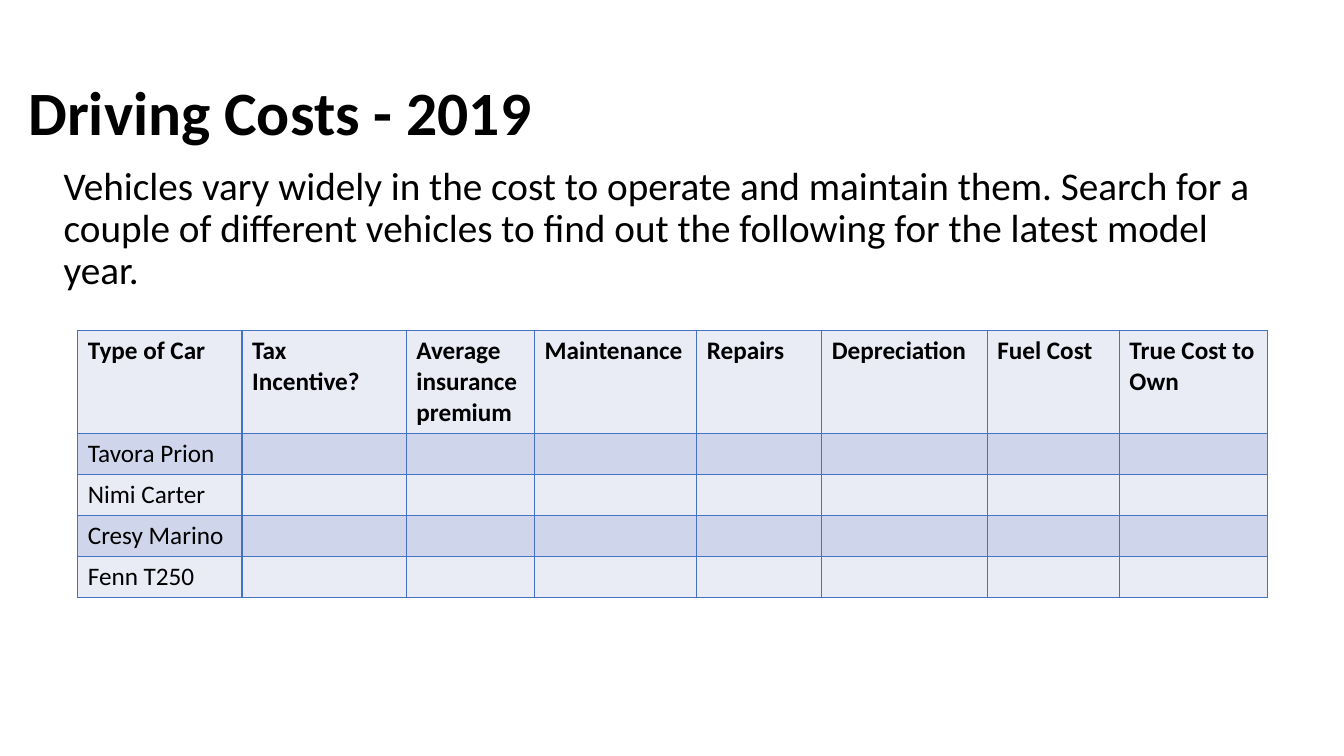
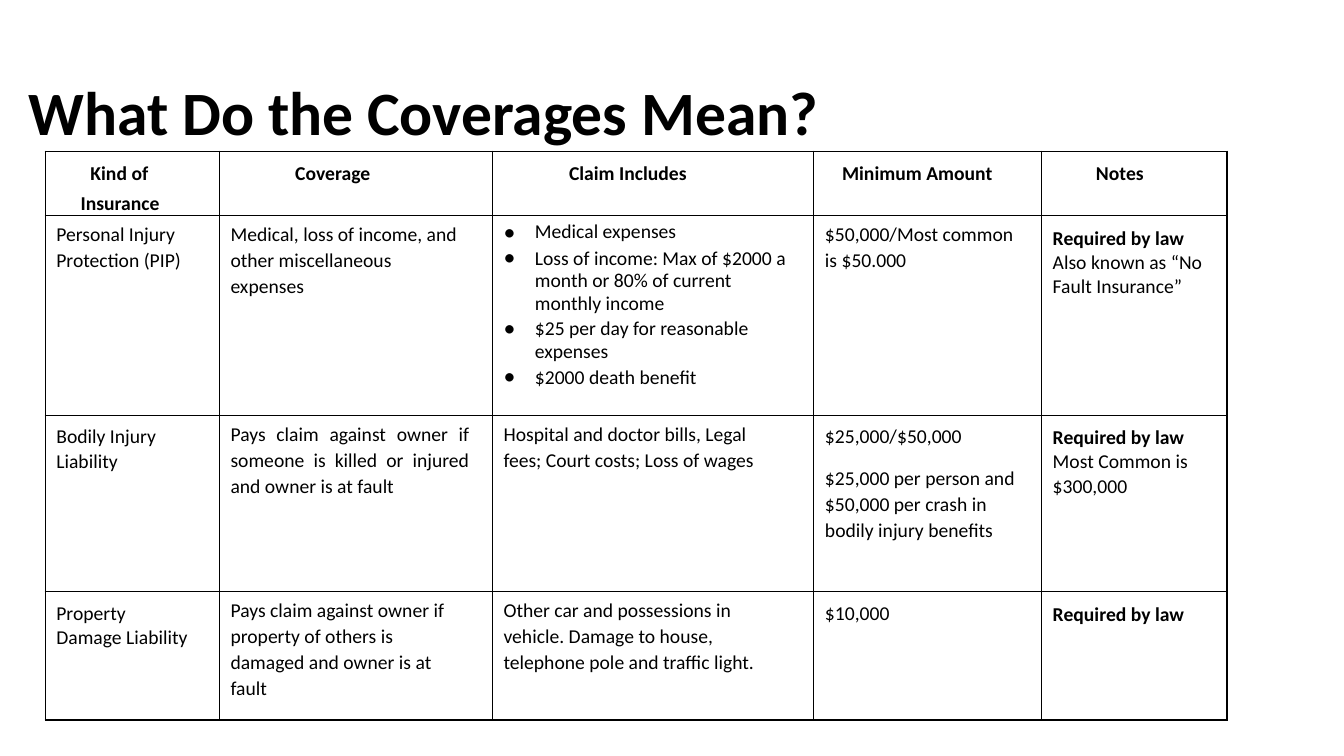
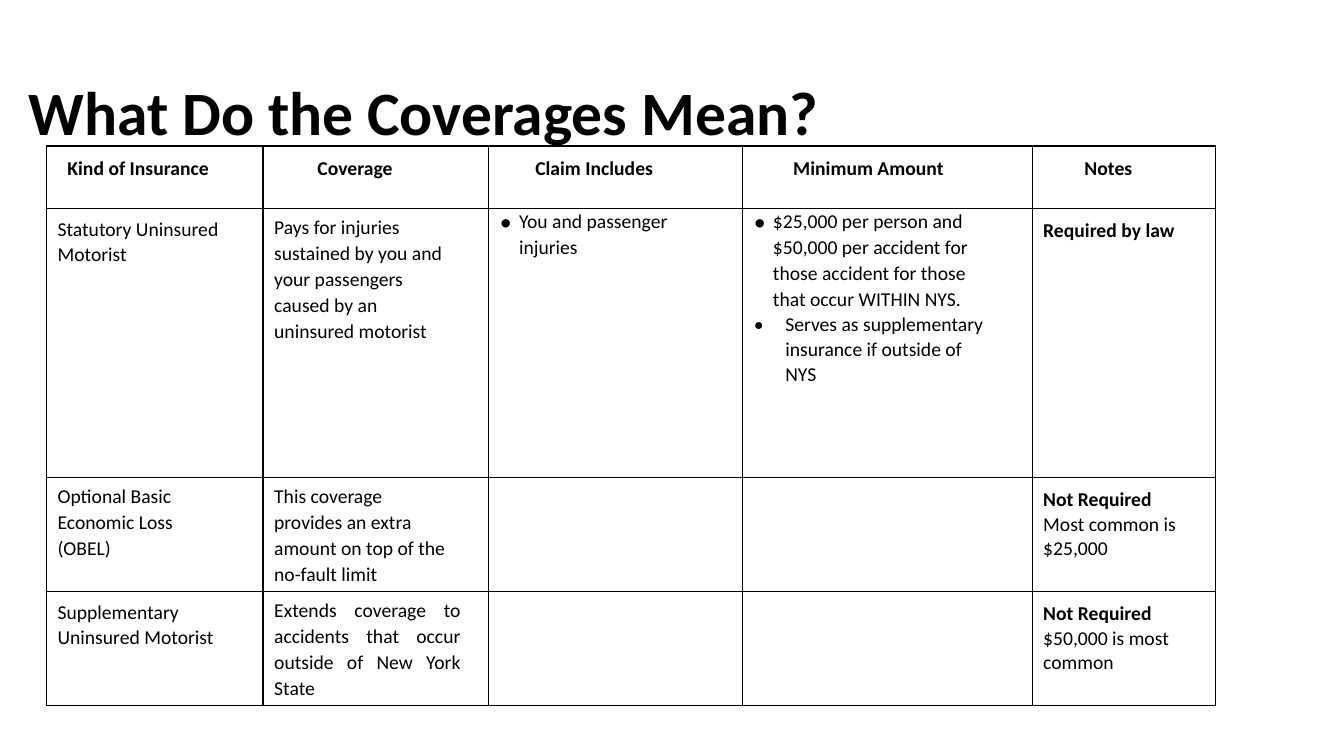
from lxml.etree import SubElement
from pptx import Presentation
from pptx.dml.color import RGBColor
from pptx.enum.text import MSO_ANCHOR, MSO_AUTO_SIZE, PP_ALIGN
from pptx.oxml.ns import qn
from pptx.util import Cm, Pt

FONT = "Calibri"
BLACK, BLUE, LIGHT, DARK = "000000", "4472C4", "E9EBF5", "CFD5EA"
CONTENT_LAYOUT, TITLE_LAYOUT = 1, 5
TITLE_BOX = (0.46, 1.07, 29.21, 3.68)
BODY_BOX = (1.35, 4.06, 30.68, 13.92)
CELL_LEFT, CELL_TOP = 0.28, 0.13

COSTS_TITLE = "Driving Costs - 2019"
COSTS_INTRO = ("Vehicles vary widely in the cost to operate and maintain them.\u00a0Search for a couple "
               "of different vehicles to find out the following for the latest model year.")
COSTS_HEADINGS = ["Type of Car", "Tax Incentive?", "Average insurance premium", "Maintenance",
                  "Repairs", "Depreciation", "Fuel Cost", "True Cost to Own"]
CARS = ["Tavora Prion", "Nimi Carter", "Cresy Marino", "Fenn T250"]
COSTS_GRID = {"at": (1.96, 8.33), "rows": [2.6] + [1.03] * len(CARS),
              "columns": [4.14, 4.14, 3.23, 4.09, 3.15, 4.17, 3.33, 3.73]}

STYLES = {
    "heading": {"spacing": 1.24, "bold": True},
    "text": {"spacing": 1.09},
    "later": {"spacing": 1.09, "before": 11.3},
    "justified": {"spacing": 1.09, "align": PP_ALIGN.JUSTIFY},
    "first": {"spacing": 1.19},
    "next": {"spacing": 1.04},
    "rule": {"spacing": 1.24, "bold": True},
    "note": {"spacing": 1.02},
    "top bullet": {"spacing": 1.2, "hanging": 0.79, "bullet": 121},
    "bullet": {"spacing": 0.95, "before": 2, "hanging": 0.79, "bullet": 121},
    "near bullet": {"spacing": 1.08, "hanging": 0.48, "bullet": 121},
    "small bullet": {"spacing": 1.05, "hanging": 0.79, "bullet": 100},
}

COVERAGE_TITLE = "What Do the Coverages Mean?"
COVERAGE_HEADINGS = ["Kind of Insurance", "Coverage", "Claim Includes", "Minimum Amount", "Notes"]
# Each cell: right margin in cm, then (style, text) paragraphs
COVERAGE_SLIDES = [
    {
        "at": (1.14, 3.81),
        "columns": [4.39, 6.88, 8.1, 5.74, 4.67],
        "rows": [1.47, 5.03, 4.45, 3.23],
        "heading_left": [0.89, 1.91, 1.93, 0.71, 1.37],
        "heading_first": 0.25,
        "cells": [
            [
                (0, [("text", "Personal Injury Protection (PIP)")]),
                (0.76, [("text", "Medical, loss of income, and other miscellaneous expenses")]),
                (0.5, [("top bullet", "Medical expenses"),
                       ("bullet", "Loss of income: Max of $2000 a month or 80% of current monthly income"),
                       ("bullet", "$25 per day for reasonable expenses"),
                       ("bullet", "$2000 death benefit")]),
                (0.5, [("text", "$50,000/Most common is $50.000")]),
                (0, [("rule", "Required by law"), ("note", "Also known as “No Fault Insurance”")]),
            ],
            [
                (0, [("first", "Bodily Injury"), ("next", "Liability")]),
                (0.58, [("justified", "Pays claim against owner if someone is killed or injured "
                                      "and owner is at fault")]),
                (1.27, [("text", "Hospital and doctor bills, Legal fees; Court costs; Loss of wages")]),
                (0.5, [("first", "$25,000/$50,000"),
                       ("later", "$25,000 per person and $50,000 per crash in bodily injury benefits")]),
                (0, [("rule", "Required by law"), ("note", "Most Common is $300,000")]),
            ],
            [
                (0, [("first", "Property"), ("next", "Damage Liability")]),
                (1, [("text", "Pays claim against owner if property of others is damaged "
                              "and owner is at fault")]),
                (1.27, [("text", "Other car and possessions in vehicle. Damage to house, "
                                 "telephone pole and traffic light.")]),
                (0, [("first", "$10,000")]),
                (0, [("rule", "Required by law")]),
            ],
        ],
    },
    {
        "at": (1.17, 3.68),
        "columns": [5.46, 5.69, 6.4, 7.29, 4.62],
        "rows": [1.57, 6.78, 2.87, 2.87],
        "heading_left": [0.53, 1.37, 1.17, 1.27, 1.32],
        "heading_first": 0,
        "cells": [
            [
                (0, [("first", "Statutory Uninsured"), ("next", "Motorist")]),
                (1, [("text", "Pays for injuries sustained by you and your passengers caused by an "
                              "uninsured motorist")]),
                (1, [("near bullet", "You and passenger injuries")]),
                (0.89, [("near bullet", "$25,000 per person and $50,000 per accident for those accident "
                                        "for those that occur WITHIN NYS."),
                        ("small bullet", "Serves as supplementary insurance if outside of NYS")]),
                (0, [("rule", "Required by law")]),
            ],
            [
                (1, [("text", "Optional Basic Economic Loss (OBEL)")]),
                (1, [("text", "This coverage provides an extra amount on top of the no-fault limit")]),
                (0, []),
                (0, []),
                (0, [("rule", "Not Required"), ("note", "Most common is $25,000")]),
            ],
            [
                (0, [("first", "Supplementary"), ("next", "Uninsured Motorist")]),
                (0.71, [("justified", "Extends coverage to accidents that occur outside of New York State")]),
                (0, []),
                (0, []),
                (0, [("rule", "Not Required"), ("note", "$50,000 is most common")]),
            ],
        ],
    },
]


def color(value):
    return RGBColor.from_string(value)


def write(paragraph, text, size=14, bold=False, spacing=1.0, before=0, align=PP_ALIGN.LEFT,
          hanging=0, first=0, bullet=0):
    """Fill a paragraph; bullet is the bullet size in percent, 0 for none."""
    paragraph.alignment = align
    paragraph.line_spacing = spacing
    paragraph.space_before = Pt(before)
    properties = paragraph._p.get_or_add_pPr()
    properties.set("marL", str(Cm(hanging)))
    properties.set("indent", str(Cm(first - hanging)))
    if bullet:
        SubElement(properties, qn("a:buSzPct")).set("val", str(bullet * 1000))
        SubElement(properties, qn("a:buFont")).set("typeface", FONT)
        SubElement(properties, qn("a:buChar")).set("char", "•")
    else:
        SubElement(properties, qn("a:buNone"))
    run = paragraph.add_run()
    run.text = text
    run.font.name, run.font.size, run.font.bold = FONT, Pt(size), bold
    run.font.color.rgb = color(BLACK)


def place(shape, box):
    shape.left, shape.top, shape.width, shape.height = (Cm(length) for length in box)
    shape.text_frame.word_wrap = True
    shape.text_frame.auto_size = MSO_AUTO_SIZE.NONE


def add_titled_slide(presentation, layout, title):
    slide = presentation.slides.add_slide(presentation.slide_layouts[layout])
    shape = slide.shapes.title
    place(shape, TITLE_BOX)
    shape.text_frame.vertical_anchor = MSO_ANCHOR.MIDDLE
    write(shape.text_frame.paragraphs[0], title, size=44, bold=True, spacing=0.9)
    return slide


def add_border(cell, line_color):
    properties = cell._tc.get_or_add_tcPr()
    for index, side in enumerate(("a:lnL", "a:lnR", "a:lnT", "a:lnB")):
        line = properties.makeelement(qn(side), {"w": str(Pt(1))})
        fill = SubElement(line, qn("a:solidFill"))
        SubElement(fill, qn("a:srgbClr")).set("val", line_color)
        properties.insert(index, line)


def add_grid(slide, grid, line_color, fills=None):
    """Add an empty bordered table; fills alternate by row."""
    columns, rows = grid["columns"], grid["rows"]
    left, top = grid["at"]
    table = slide.shapes.add_table(len(rows), len(columns), Cm(left), Cm(top),
                                   Cm(sum(columns)), Cm(sum(rows))).table
    table.first_row = table.horz_banding = False
    for column, width in zip(table.columns, columns):
        column.width = Cm(width)
    for index, (row, height) in enumerate(zip(table.rows, rows)):
        row.height = Cm(height)
        for cell in row.cells:
            if fills:
                cell.fill.solid()
                cell.fill.fore_color.rgb = color(fills[index % len(fills)])
            else:
                cell.fill.background()
            add_border(cell, line_color)
    return table


def set_margins(cell, left, right=0, top=CELL_TOP):
    cell.margin_left, cell.margin_right = Cm(left), Cm(right)
    cell.margin_top, cell.margin_bottom = Cm(top), 0


def add_costs_slide(presentation):
    slide = add_titled_slide(presentation, CONTENT_LAYOUT, COSTS_TITLE)
    body = slide.placeholders[1]
    place(body, BODY_BOX)
    write(body.text_frame.paragraphs[0], COSTS_INTRO, size=28, spacing=0.9)
    table = add_grid(slide, COSTS_GRID, BLUE, (LIGHT, DARK))
    for column, heading in enumerate(COSTS_HEADINGS):
        write(table.cell(0, column).text_frame.paragraphs[0], heading, size=18, bold=True)
    for row, car in enumerate(CARS, 1):
        write(table.cell(row, 0).text_frame.paragraphs[0], car, size=18)


def add_coverage_slide(presentation, content):
    slide = add_titled_slide(presentation, TITLE_LAYOUT, COVERAGE_TITLE)
    table = add_grid(slide, content, BLACK)
    for column, (heading, left) in enumerate(zip(COVERAGE_HEADINGS, content["heading_left"])):
        cell = table.cell(0, column)
        set_margins(cell, left)
        first = 0 if column else content["heading_first"]
        write(cell.text_frame.paragraphs[0], heading, first=first, **STYLES["heading"])
    for row, cells in enumerate(content["cells"], 1):
        for column, (right, paragraphs) in enumerate(cells):
            cell = table.cell(row, column)
            bulleted = any("bullet" in style for style, _ in paragraphs)
            set_margins(cell, CELL_LEFT, right, 0 if bulleted else CELL_TOP)
            for index, (style, text) in enumerate(paragraphs):
                frame = cell.text_frame
                paragraph = frame.add_paragraph() if index else frame.paragraphs[0]
                write(paragraph, text, **STYLES[style])


def main():
    presentation = Presentation()
    presentation.slide_width, presentation.slide_height = Cm(33.87), Cm(19.05)
    add_costs_slide(presentation)
    for content in COVERAGE_SLIDES:
        add_coverage_slide(presentation, content)
    presentation.save("out.pptx")


if __name__ == "__main__":
    main()
